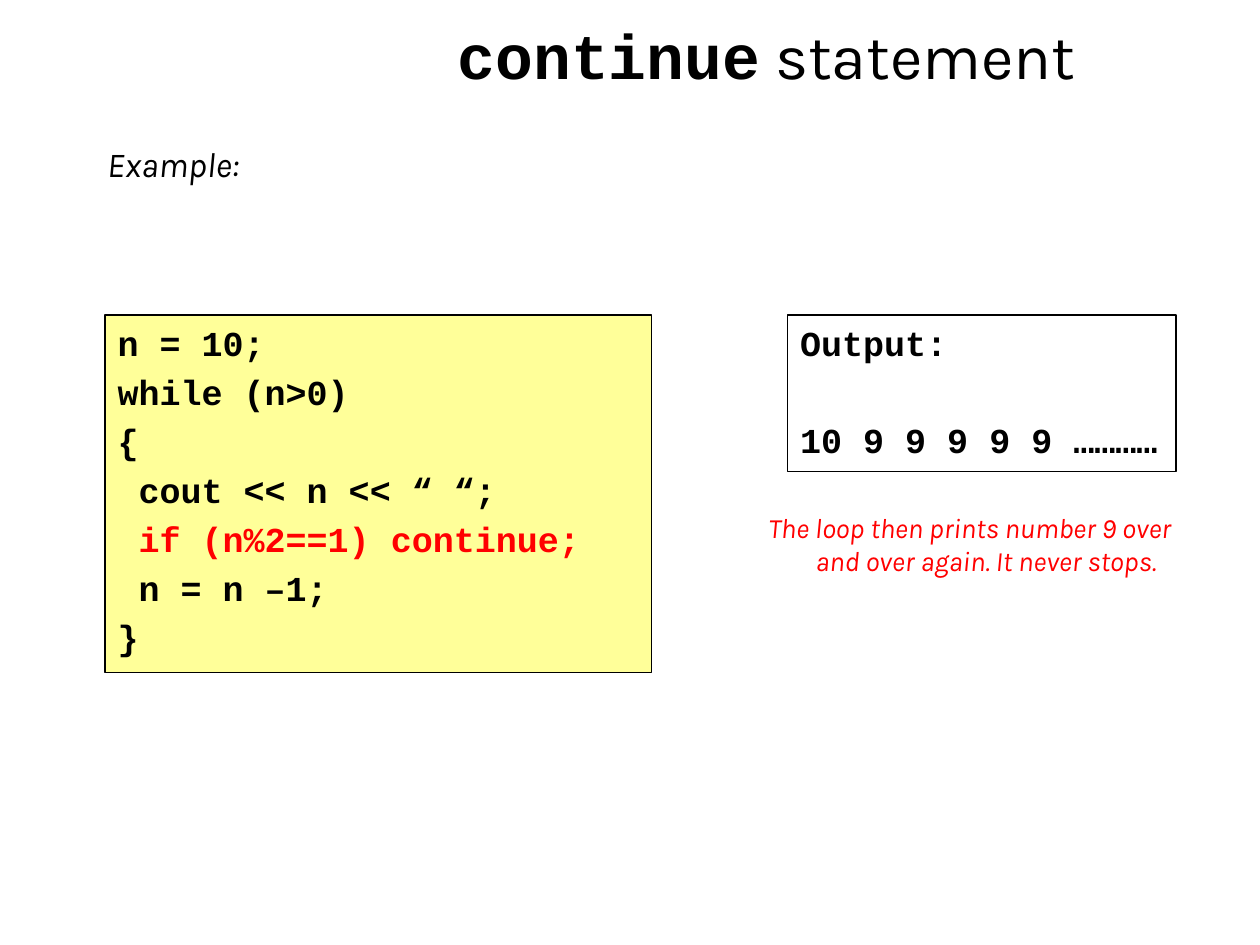
import pptx
import pptx.util
import pptx.dml.color
import pptx.enum.shapes
import pptx.enum.text
from dataclasses import dataclass

Cm, Pt = pptx.util.Cm, pptx.util.Pt
RGB = pptx.dml.color.RGBColor.from_string


@dataclass
class Theme:
    black: str = "000000"
    red: str = "FF0000"
    white: str = "FFFFFF"
    yellow: str = "FFFF99"
    code: str = "Courier New"
    prose: str = "Karla"
    title_size: int = 36
    body_size: int = 20
    note_size: int = 16


theme = Theme()


def add_box(left, top, width, height, fill=None, outlined=False):
    """Add a plain rectangle with left-aligned, top-anchored wrapping text."""
    box = page.shapes.add_shape(pptx.enum.shapes.MSO_SHAPE.RECTANGLE,
                                Cm(left), Cm(top), Cm(width), Cm(height))
    box.shadow.inherit = False
    if fill:
        box.fill.solid()
        box.fill.fore_color.rgb = RGB(fill)
    else:
        box.fill.background()
    if outlined:
        box.line.color.rgb = RGB(theme.black)
        box.line.width = Pt(0.75)
    else:
        box.line.fill.background()
    frame = box.text_frame
    frame.word_wrap = True
    frame.vertical_anchor = pptx.enum.text.MSO_ANCHOR.TOP
    frame.paragraphs[0].alignment = pptx.enum.text.PP_ALIGN.LEFT
    return frame


def set_font(font, name, size, color=theme.black, bold=False, italic=False):
    font.name, font.size = name, Pt(size)
    font.bold, font.italic = bold, italic
    font.color.rgb = RGB(color)


deck = pptx.Presentation()
deck.slide_width, deck.slide_height = Cm(25.4), Cm(19.05)
page = deck.slides.add_slide(deck.slide_layouts[6])

# Example label
label = add_box(1.91, 2.75, 22.23, 1.27, theme.white)
para = label.paragraphs[0]
para.text = "Example:"
set_font(para.font, theme.prose, theme.body_size, italic=True)

# Title
title = add_box(7.2, 0.21, 16.51, 2.12, theme.white)
para = title.paragraphs[0]
para.alignment = pptx.enum.text.PP_ALIGN.CENTER
for text, name, bold in (("continue", theme.code, True),
                         (" statement", theme.prose, False)):
    span = para.add_run()
    span.text = text
    set_font(span.font, name, theme.title_size, bold=bold)

# Code listing and its output: (space before, text, colour) per line
line_gap, section_gap = 4, 31.8
listing = [
    (0, "n = 10;", theme.black),
    (line_gap, "while (n>0)", theme.black),
    (line_gap, "{", theme.black),
    (line_gap, " cout << n << “ “;", theme.black),
    (line_gap, " if (n%2==1) continue;", theme.red),
    (line_gap, " n = n –1;", theme.black),
    (line_gap, "}", theme.black),
]
output = [
    (0, "Output:", theme.black),
    (section_gap, "10 9 9 9 9 9 …………", theme.black),
]
for left, width, height, fill, lines in ((2.12, 11.01, 7.21, theme.yellow, listing),
                                         (15.88, 7.83, 3.15, None, output)):
    frame = add_box(left, 6.35, width, height, fill, outlined=True)
    for index, (gap, text, color) in enumerate(lines):
        para = frame.add_paragraph() if index else frame.paragraphs[0]
        para.alignment = pptx.enum.text.PP_ALIGN.LEFT
        para.space_before = Pt(gap)
        para.text = text
        set_font(para.font, theme.code, theme.body_size, color, bold=True)

# Note with a hanging indent
note = add_box(15.24, 10.16, 9.1, 2.33, theme.white)
para = note.paragraphs[0]
properties = para._p.get_or_add_pPr()
properties.set("marL", str(Cm(0.95)))
properties.set("indent", str(-Cm(0.95)))
para.text = "The loop then prints number 9 over and over again. It never stops."
set_font(para.font, theme.prose, theme.note_size, theme.red, italic=True)

deck.save("out.pptx")
